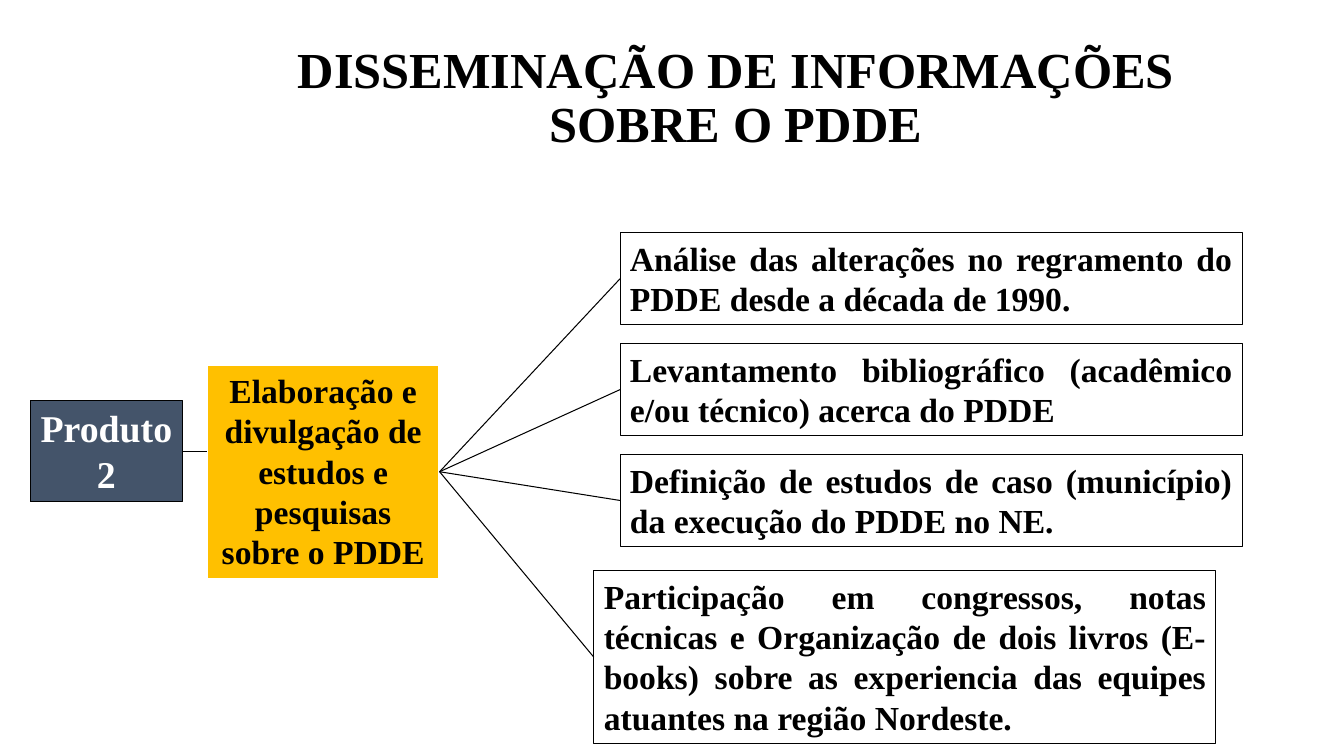
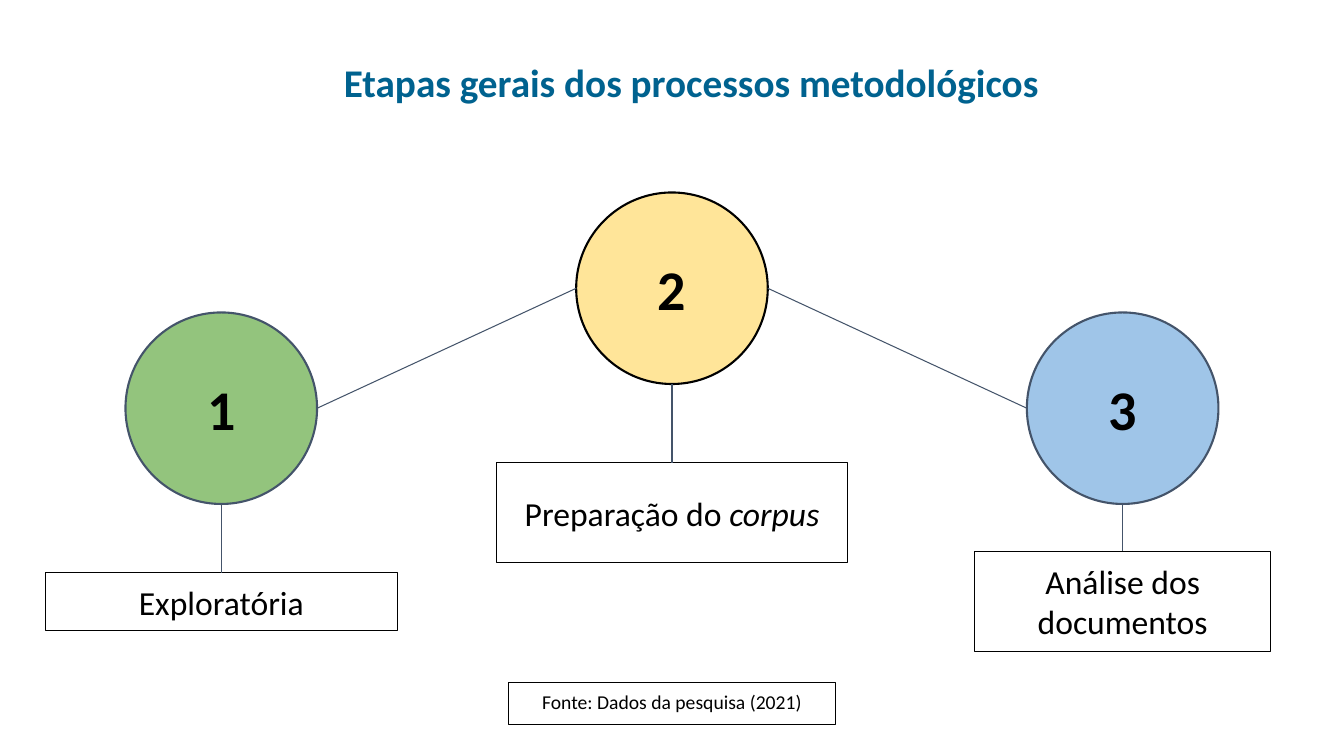
"""Build two slides on the PDDE study: its second product and its method steps."""
from dataclasses import dataclass

import pptx
import pptx.dml.color
import pptx.enum.shapes
import pptx.enum.text
import pptx.oxml.ns
import pptx.util
from lxml import etree

PX = 9144
SLIDE_W, SLIDE_H = 1333, 750
TOP, LEFT, BOTTOM, RIGHT = range(4)
TITLE_ONLY = 5
SHAPES = pptx.enum.shapes.MSO_SHAPE
ALIGN = pptx.enum.text.PP_ALIGN
ANCHOR = pptx.enum.text.MSO_ANCHOR


@dataclass(frozen=True)
class Theme:
    """Colours, fonts, type sizes and line widths."""
    black: str = "000000"
    white: str = "FFFFFF"
    slate: str = "44546A"
    amber: str = "FFC000"
    blue: str = "00628F"
    green: str = "93C47D"
    cream: str = "FFE599"
    sky: str = "9FC5E8"
    serif: str = "Times New Roman"
    sans: str = "Calibri"
    heading: int = 36
    subheading: int = 28
    number: int = 40
    product: int = 27
    body: int = 24
    source: int = 14
    thin: float = 0.75
    thick: float = 1.5


T = Theme()
SERIF_BOX = dict(font=T.serif, bold=True, inset=(10, 5), anchor=ANCHOR.TOP)
SANS_BOX = dict(font=T.sans, inset=(13, 13), anchor=ANCHOR.MIDDLE)

PRODUCT = ("Produto 2", (30, 397, 151, 101))
GOAL = ("Elaboração e divulgação de estudos e pesquisas sobre o PDDE",
        (205, 362, 231, 212))
ACTION_TOP, ACTION_PITCH = 231, 110
ACTIONS = [
    "Análise das alterações no regramento do PDDE desde a década de 1990.",
    "Levantamento bibliográfico (acadêmico e/ou técnico) acerca do PDDE",
    "Definição de estudos de caso (município) da execução do PDDE no NE.",
]
LAST_ACTION = (
    "Participação em congressos, notas técnicas e Organização de dois livros "
    "(E-books) sobre as experiencia das equipes atuantes na região Nordeste.",
    (589, 566, 617, 172))

DIAMETER, STEP_PITCH = 190, 447
STEPS = [
    dict(top=310, fill=T.green, line=T.slate,
         label=[("Exploratória", False)], box=(568, 349, 58)),
    dict(top=191, fill=T.cream, line=T.black,
         label=[("Preparação do ", False), ("corpus", True)],
         box=(459, 349, 99)),
    dict(top=310, fill=T.sky, line=T.slate,
         label=[("Análise dos documentos", False)], box=(547, 293, 99)),
]
SOURCE = ("Fonte: Dados da pesquisa (2021)", (504, 677, 325, 42))


def rgb(color):
    """Turn a hex string into a colour."""
    return pptx.dml.color.RGBColor.from_string(color)


def assign(obj, **values):
    """Set each named attribute on an object."""
    for name, value in values.items():
        setattr(obj, name, value)


def emu(lengths):
    """Scale px lengths to whole EMU."""
    return [round(n * PX) for n in lengths]


def write(shape, text, size, font, inset, anchor, bold=False, color=T.black,
          align=ALIGN.CENTER, spacing=1.0):
    """Fill a shape with one paragraph of plain or (text, italic) runs."""
    tf = shape.text_frame
    across, down = emu(inset)
    assign(tf, word_wrap=True, auto_size=pptx.enum.text.MSO_AUTO_SIZE.NONE,
           vertical_anchor=anchor, margin_left=across, margin_right=across,
           margin_top=down, margin_bottom=down)
    p = tf.paragraphs[0]
    assign(p, alignment=align, line_spacing=spacing)
    for content, italic in [(text, False)] if isinstance(text, str) else text:
        r = p.add_run()
        r.text = content
        assign(r.font, size=pptx.util.Pt(size), name=font, bold=bold,
               italic=italic)
        r.font.color.rgb = rgb(color)


def add_slide(prs, title, frame, **style):
    """Add a slide with a placed and formatted title."""
    s = prs.slides.add_slide(prs.slide_layouts[TITLE_ONLY])
    sp = s.shapes.title
    assign(sp, **dict(zip(("left", "top", "width", "height"), emu(frame))))
    write(sp, title, bold=True, spacing=0.9, **style)
    return s


def add_box(s, text, frame, kind=SHAPES.RECTANGLE, fill=None, line=T.black,
            width=T.thin, size=T.body, **style):
    """Add an outlined shape with text."""
    sp = s.shapes.add_shape(kind, *emu(frame))
    sp.shadow.inherit = False
    if fill:
        sp.fill.solid()
        sp.fill.fore_color.rgb = rgb(fill)
    else:
        sp.fill.background()
    sp.line.color.rgb = rgb(line)
    sp.line.width = pptx.util.Pt(width)
    write(sp, text, size, **style)
    return sp


def middle(sp, side):
    """Give the middle point of a shape's side in EMU."""
    x, y = sp.left + sp.width // 2, sp.top + sp.height // 2
    return {TOP: (x, sp.top), LEFT: (sp.left, y),
            BOTTOM: (x, sp.top + sp.height),
            RIGHT: (sp.left + sp.width, y)}[side]


def link(s, begin, end, color):
    """Draw a line between (shape, side) ends or points, joining rectangles."""
    ends = [begin, end]
    points = [e if isinstance(e[0], int) else middle(*e) for e in ends]
    line = s.shapes.add_connector(
        pptx.enum.shapes.MSO_CONNECTOR.STRAIGHT, *points[0], *points[1])
    for join, (sp, side) in zip((line.begin_connect, line.end_connect), ends):
        if not isinstance(sp, int) and sp.auto_shape_type == SHAPES.RECTANGLE:
            join(sp, side)
    line.line.color.rgb = rgb(color)
    line.line.width = pptx.util.Pt(T.thin)
    etree.SubElement(line._element.spPr, pptx.oxml.ns.qn("a:effectLst"))


def build_product(prs):
    """Draw the product, its goal and the actions that branch from it."""
    s = add_slide(prs, "DISSEMINAÇÃO DE INFORMAÇÕES SOBRE O PDDE",
                  (240, 26, 980, 145), size=T.heading, font=T.serif,
                  inset=(10, 5), anchor=ANCHOR.MIDDLE)
    product = add_box(s, *PRODUCT, fill=T.slate, size=T.product,
                      color=T.white, **SERIF_BOX)
    goal = add_box(s, *GOAL, fill=T.amber, line=T.white, width=T.thick,
                   **SERIF_BOX)
    link(s, (product, RIGHT), (goal.left, middle(product, RIGHT)[1]), T.black)
    actions = [(text, (615, ACTION_TOP + i * ACTION_PITCH, 617, 91))
               for i, text in enumerate(ACTIONS)]
    for text, frame in actions + [LAST_ACTION]:
        action = add_box(s, text, frame, align=ALIGN.JUSTIFY, **SERIF_BOX)
        link(s, (goal, RIGHT), (action, LEFT), T.black)


def build_steps(prs):
    """Draw the numbered method steps with their labels and the source."""
    s = add_slide(prs, "Etapas gerais dos processos metodológicos",
                  (230, 50, 911, 84), size=T.subheading, font=T.sans,
                  color=T.blue, inset=(13, 13), anchor=ANCHOR.TOP)
    previous = None
    for i, step in enumerate(STEPS):
        center = SLIDE_W / 2 + (i - 1) * STEP_PITCH
        circle = add_box(
            s, str(i + 1),
            (center - DIAMETER / 2, step["top"], DIAMETER, DIAMETER),
            kind=SHAPES.OVAL, fill=step["fill"], line=step["line"],
            width=T.thick, size=T.number, bold=True, **SANS_BOX)
        top, width, height = step["box"]
        label = add_box(s, step["label"],
                        (center - width / 2, top, width, height), **SANS_BOX)
        link(s, (circle, BOTTOM), (label, TOP), T.slate)
        if previous is not None:
            link(s, (previous, RIGHT), (circle, LEFT), T.slate)
        previous = circle
    add_box(s, *SOURCE, size=T.source, spacing=0.9, **SANS_BOX)


def main():
    """Build and save the presentation."""
    prs = pptx.Presentation()
    prs.slide_width, prs.slide_height = emu((SLIDE_W, SLIDE_H))
    build_product(prs)
    build_steps(prs)
    prs.save("out.pptx")


if __name__ == "__main__":
    main()
